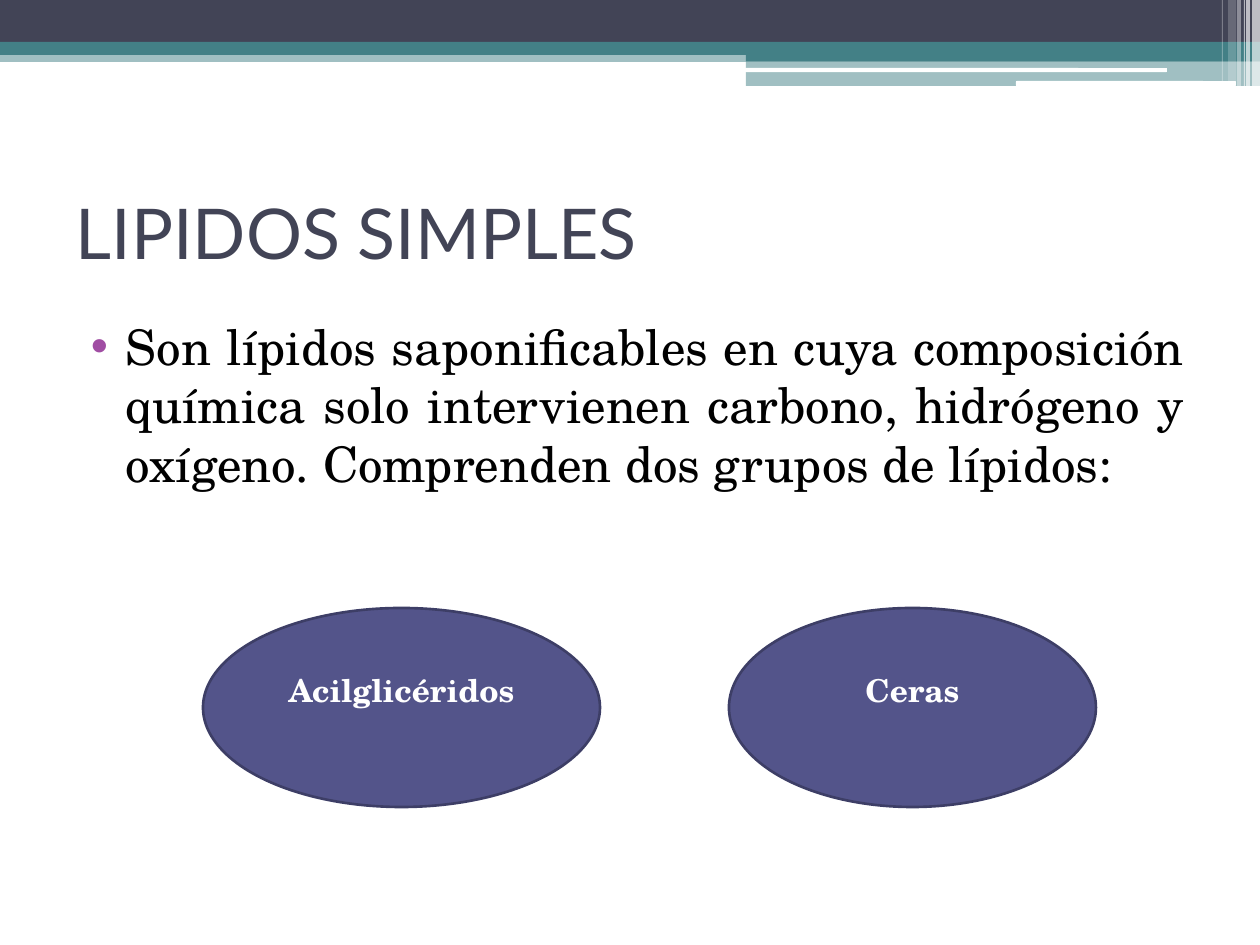
from dataclasses import dataclass

from lxml.etree import SubElement
from pptx import Presentation
from pptx.dml.color import RGBColor
from pptx.enum.shapes import MSO_SHAPE as Shape
from pptx.enum.text import MSO_ANCHOR as Anchor, PP_ALIGN as Align
from pptx.oxml.ns import qn
from pptx.util import Pt

SCALE = 914400 / 126


@dataclass(frozen=True)
class Theme:
    ink: str = "424456"
    teal: str = "438086"
    white: str = "FFFFFF"
    black: str = "000000"
    dot: str = "A04DA3"
    oval: str = "53548A"
    edge: str = "3D3E66"
    sans: str = "Lato"
    serif: str = "TeX Gyre Schola"
    head: int = 40
    body: int = 28
    label: int = 18


def px(n):
    return round(n * SCALE)


def rgb(code):
    return RGBColor.from_string(code)


def write(frame, text, font, size, color, bold=False, align=Align.LEFT,
          anchor=Anchor.TOP, pads=(13, 6, 13, 6)):
    """Fill a text frame with one paragraph and return it; pads are l, t, r, b."""
    frame.word_wrap = True
    frame.vertical_anchor = anchor
    (frame.margin_left, frame.margin_top,
     frame.margin_right, frame.margin_bottom) = map(px, pads)
    para = frame.paragraphs[0]
    para.alignment = align
    run = para.add_run()
    run.text = text
    run.font.name, run.font.size, run.font.bold = font, Pt(size), bold
    run.font.color.rgb = rgb(color)
    return para


def bullet(para, color, left, hang):
    props = para._p.get_or_add_pPr()
    props.set("marL", str(px(left)))
    props.set("indent", str(-px(hang)))
    tint = SubElement(props, qn("a:buClr"))
    SubElement(tint, qn("a:srgbClr"), val=color)
    SubElement(props, qn("a:buFont"), typeface="Arial")
    SubElement(props, qn("a:buChar"), char="•")


class Deck:
    def __init__(self, theme):
        self.theme = theme
        self.file = Presentation()
        self.file.slide_width, self.file.slide_height = px(1260), px(945)
        self.slide = self.file.slides.add_slide(self.file.slide_layouts[6])

    def shape(self, kind, box, color, alpha=100):
        item = self.slide.shapes.add_shape(kind, *map(px, box))
        item.shadow.inherit = False
        item.fill.solid()
        item.fill.fore_color.rgb = rgb(color)
        item.line.fill.background()
        if alpha < 100:
            tint = item.fill._xPr.find(".//" + qn("a:srgbClr"))
            SubElement(tint, qn("a:alpha"), val=str(alpha * 1000))
        return item

    def band(self, box, color, alpha=100):
        return self.shape(Shape.RECTANGLE, box, color, alpha)

    def text(self, box, words, **style):
        item = self.slide.shapes.add_textbox(*map(px, box))
        return write(item.text_frame, words, **style)

    def oval(self, box, words):
        t = self.theme
        item = self.shape(Shape.OVAL, box, t.oval)
        item.line.color.rgb = rgb(t.edge)
        item.line.width = Pt(1.5)
        # The deeper bottom pad lifts the label above the middle.
        write(item.text_frame, words, t.serif, t.label, t.white, bold=True,
              align=Align.CENTER, anchor=Anchor.MIDDLE, pads=(13, 6, 13, 42))

    def header(self):
        t = self.theme
        self.band((0, 50, 1260, 12), t.teal, 50)
        self.band((0, 0, 1260, 42), t.ink)
        self.band((0, 42, 1260, 13), t.teal)
        self.band((746, 49, 514, 12), t.teal)
        self.band((746, 61, 514, 25), t.teal, 50)
        for box in ((745, 68, 422, 4), (1016, 81, 220, 5)):
            self.shape(Shape.ROUNDED_RECTANGLE, box, t.white)
        stripes = ((1252, 8, 86, 65), (1246, 4, 86, 65), (1244, 1, 86, 60),
                   (1237, 4, 86, 40), (1228, 8, 81, 20), (1222, 1, 81, 30))
        for left, wide, high, alpha in stripes:
            self.band((left, 0, wide, high), t.white, alpha)


def main():
    t = Theme()
    deck = Deck(t)
    deck.header()
    deck.text((63, 158, 1134, 147), "LIPIDOS SIMPLES", font=t.sans,
              size=t.head, color=t.ink, anchor=Anchor.MIDDLE)
    para = deck.text(
        (63, 310, 1134, 596),
        "Son lípidos saponificables en cuya composición química solo "
        "intervienen carbono, hidrógeno y oxígeno. Comprenden dos grupos "
        "de lípidos:",
        font=t.serif, size=t.body, color=t.black, align=Align.JUSTIFY)
    para.space_before = Pt(3)
    bullet(para, t.dot, 50, 35)
    for left, wide, words in ((203, 397, "Acilglicéridos"),
                              (729, 367, "Ceras")):
        deck.oval((left, 608, wide, 199), words)
    deck.file.save("out.pptx")


if __name__ == "__main__":
    main()
